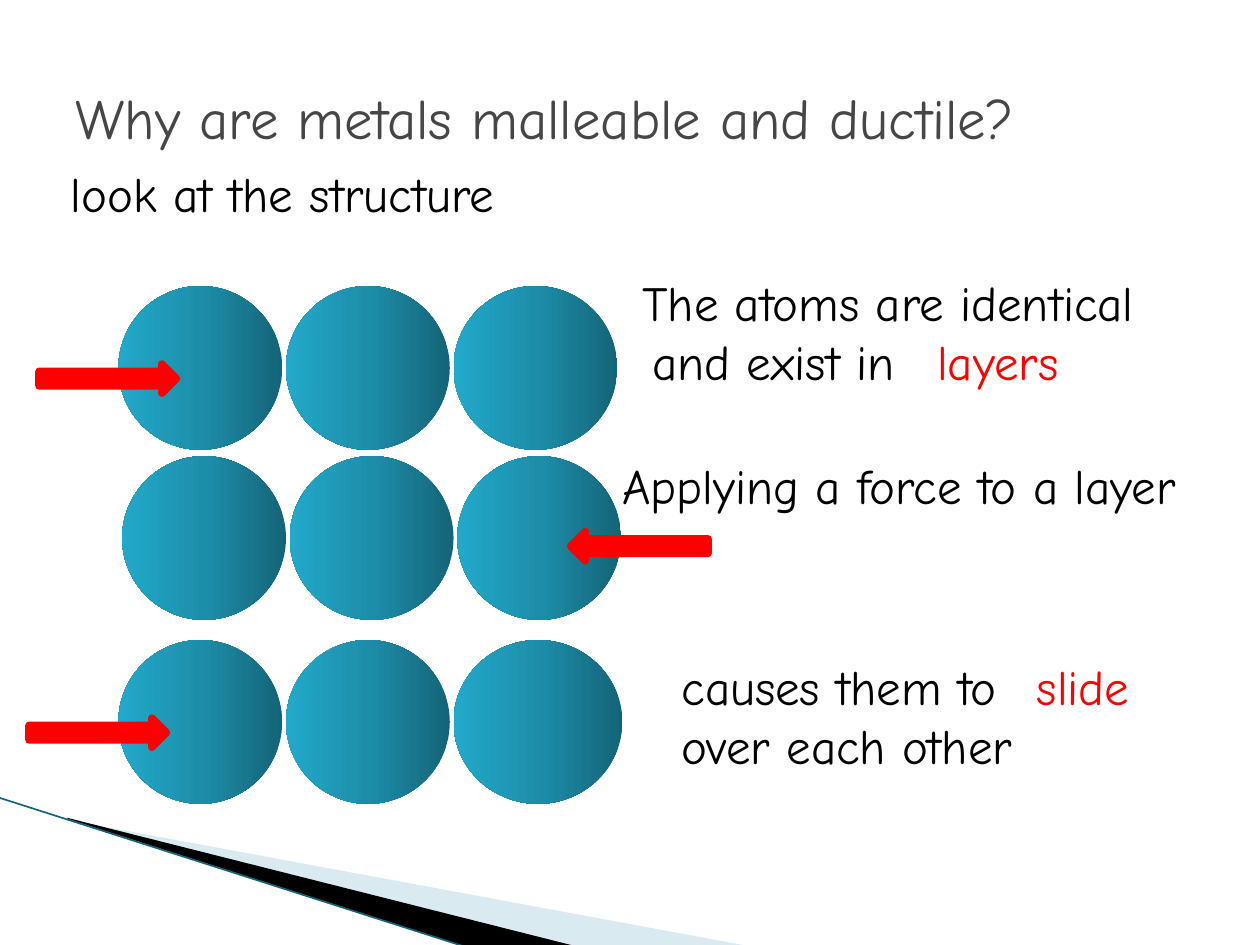
from copy import deepcopy

from lxml.etree import SubElement
from pptx import Presentation
from pptx.dml.color import RGBColor
from pptx.enum.shapes import MSO_CONNECTOR, MSO_SHAPE
from pptx.enum.text import MSO_ANCHOR, MSO_AUTO_SIZE, PP_ALIGN
from pptx.oxml.ns import qn
from pptx.util import Inches, Pt

FONT = "Comic Neue"
COLORS = {
    "black": "000000",
    "title": "464646",
    "red": "FF0000",
    "pale": "A0CBDC",
    "edge": "146478",
    "atom_dark": "146478",
    "atom_middle": "1D8EAA",
    "atom_light": "22A9CA",
}
ATOM_SIZE = 1.3
ATOM_PITCH = 1.33


def color(name):
    return RGBColor.from_string(COLORS[name])


def place(shape, left, top, width, height):
    shape.left, shape.top = Inches(left), Inches(top)
    shape.width, shape.height = Inches(width), Inches(height)


def write_text(shape, text, size=28, fill="black", anchor=MSO_ANCHOR.TOP,
               auto_size=MSO_AUTO_SIZE.NONE):
    frame = shape.text_frame
    frame.word_wrap = True
    frame.auto_size = auto_size
    frame.vertical_anchor = anchor
    paragraph = frame.paragraphs[0]
    paragraph.alignment = PP_ALIGN.LEFT
    run = paragraph.add_run()
    run.text = text
    run.font.name = FONT
    run.font.size = Pt(size)
    run.font.color.rgb = color(fill)
    return paragraph


def add_label(slide, text, left, top, width, fill="black"):
    box = slide.shapes.add_textbox(Inches(left), Inches(top), Inches(width), Inches(0.57))
    write_text(box, text, fill=fill, auto_size=MSO_AUTO_SIZE.SHAPE_TO_FIT_TEXT)


def add_wedge(slide, points, fill, alpha=None):
    start, *others = [(Inches(x), Inches(y)) for x, y in points]
    builder = slide.shapes.build_freeform(*start)
    builder.add_line_segments(others, close=True)
    wedge = builder.convert_to_shape()
    wedge.shadow.inherit = False
    wedge.line.fill.background()
    wedge.fill.solid()
    wedge.fill.fore_color.rgb = color(fill)
    if alpha is not None:
        srgb = wedge._element.spPr.find(".//" + qn("a:srgbClr"))
        SubElement(srgb, qn("a:alpha")).set("val", str(alpha * 1000))


def add_edge_line(slide):
    line = slide.shapes.add_connector(
        MSO_CONNECTOR.STRAIGHT, Inches(-0.01), Inches(6.33), Inches(3.71), Inches(7.52))
    line.line.color.rgb = color("edge")
    line.line.width = Pt(0.95)
    SubElement(line._element.spPr, qn("a:effectLst"))


def fill_atom(atom):
    atom.fill.gradient()
    atom.fill.gradient_angle = 180
    stop_list = atom._element.spPr.find(".//" + qn("a:gsLst"))
    stop_list.insert(1, deepcopy(stop_list[0]))
    names = ("atom_dark", "atom_middle", "atom_light")
    for stop, position, name in zip(atom.fill.gradient_stops, (0, 0.5, 1), names):
        stop.position = position
        stop.color.rgb = color(name)


def add_atom_row(slide, left, top, last_width=ATOM_SIZE):
    group = slide.shapes.add_group_shape()
    for index, width in enumerate((ATOM_SIZE, ATOM_SIZE, last_width)):
        atom = group.shapes.add_shape(
            MSO_SHAPE.OVAL, Inches(left + index * ATOM_PITCH), Inches(top),
            Inches(width), Inches(ATOM_SIZE))
        atom.shadow.inherit = False
        atom.line.fill.background()
        fill_atom(atom)


def add_force_arrow(slide, left, top, flipped=False):
    arrow = slide.shapes.add_shape(
        MSO_SHAPE.RIGHT_ARROW, Inches(left), Inches(top), Inches(1.09), Inches(0.23))
    arrow.shadow.inherit = False
    arrow.fill.solid()
    arrow.fill.fore_color.rgb = color("red")
    arrow.line.color.rgb = color("red")
    arrow.line.width = Pt(4.33)
    if flipped:
        arrow._element.spPr.find(qn("a:xfrm")).set("flipH", "1")


def fill_placeholders(slide):
    title, body = slide.placeholders[0], slide.placeholders[1]
    place(title, 0.5, 0.3, 9, 1.25)
    write_text(title, "Why are metals malleable and ductile?", size=32.4,
               fill="title", anchor=MSO_ANCHOR.MIDDLE)
    place(body, 0.34, 1.25, 7, 0.8)
    paragraph = write_text(body, "look at the structure")
    paragraph.space_before = Pt(0)
    properties = paragraph._element.get_or_add_pPr()
    properties.set("marL", str(Inches(0.4)))
    properties.set("indent", str(Inches(-0.28)))
    SubElement(properties, qn("a:buNone"))


def main():
    presentation = Presentation()
    presentation.slide_width, presentation.slide_height = Inches(10), Inches(7.5)
    slide = presentation.slides.add_slide(presentation.slide_layouts[1])

    add_wedge(slide, [(0.55, 6.51), (5.95, 7.51), (4.56, 7.51), (0.55, 6.5)], "pale", alpha=40)
    add_wedge(slide, [(0.53, 6.49), (4.57, 7.51), (3.72, 7.52), (0.54, 6.5)], "black")
    add_edge_line(slide)
    fill_placeholders(slide)

    add_atom_row(slide, 0.94, 2.27)
    add_atom_row(slide, 0.97, 3.62)
    add_atom_row(slide, 0.94, 5.08, last_width=1.34)

    add_label(slide, "The atoms are identical", 5, 2.11, 5)
    add_label(slide, "Applying a force to a layer", 4.84, 3.57, 5.31)
    add_label(slide, "and exist in", 5.08, 2.58, 4.06)
    add_label(slide, "layers", 7.34, 2.58, 2.27, fill="red")

    add_force_arrow(slide, 0.31, 2.89)
    add_force_arrow(slide, 0.23, 5.7)
    add_force_arrow(slide, 4.53, 4.22, flipped=True)

    add_label(slide, "causes them to", 5.31, 5.16, 3.05)
    add_label(slide, "slide", 8.13, 5.16, 1.09, fill="red")
    add_label(slide, "over each other", 5.31, 5.63, 3.67)

    presentation.save("out.pptx")


if __name__ == "__main__":
    main()
